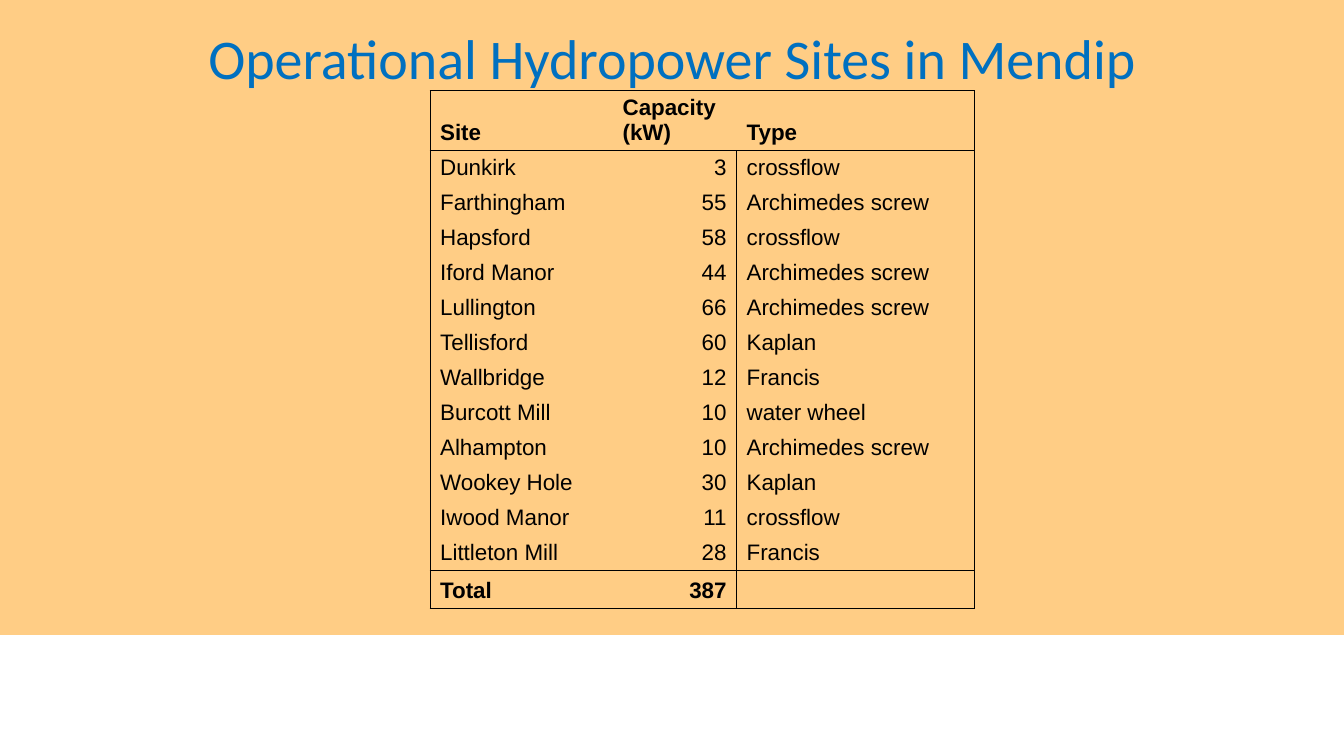
"""Build the slide listing operational hydropower sites in Mendip."""
import pptx
import pptx.dml.color
import pptx.enum.shapes
import pptx.enum.text
import pptx.oxml.ns
import pptx.util
from lxml import etree

WIDTH, HEIGHT = 13.33, 7.5
COLUMNS = [1.81, 1.23, 2.36]
HEADER_ROW, BODY_ROW = 0.52, 0.3
ROWS = [
    ("Site", "Capacity (kW)", "Type"),
    ("Dunkirk", "3", "crossflow"),
    ("Farthingham", "55", "Archimedes screw"),
    ("Hapsford", "58", "crossflow"),
    ("Iford Manor", "44", "Archimedes screw"),
    ("Lullington", "66", "Archimedes screw"),
    ("Tellisford", "60", "Kaplan"),
    ("Wallbridge", "12", "Francis"),
    ("Burcott Mill", "10", "water wheel"),
    ("Alhampton", "10", "Archimedes screw"),
    ("Wookey Hole", "30", "Kaplan"),
    ("Iwood Manor", "11", "crossflow"),
    ("Littleton Mill", "28", "Francis"),
    ("Total", "387", ""),
]


def rgb(value):
    return pptx.dml.color.RGBColor.from_string(value)


def box(x, y, w, h):
    shares = ((x, WIDTH), (y, HEIGHT), (w, WIDTH), (h, HEIGHT))
    return [pptx.util.Inches(share * full) for share, full in shares]


def style(p, font, size, color, bold=False):
    for r in p.runs:
        r.font.name = font
        r.font.size = pptx.util.Pt(size)
        r.font.bold = bold
        r.font.color.rgb = rgb(color)


def add_band(s, place, color, opacity):
    sp = s.shapes.add_shape(pptx.enum.shapes.MSO_SHAPE.RECTANGLE, *place)
    sp.shadow.inherit = False
    sp.fill.solid()
    sp.fill.fore_color.rgb = rgb(color)
    sp.line.fill.background()
    tint = sp.fill._xPr.find(".//" + pptx.oxml.ns.qn("a:srgbClr"))
    etree.SubElement(tint, pptx.oxml.ns.qn("a:alpha"), val=str(opacity * 1000))


def add_title(s, place, text):
    tf = s.shapes.add_textbox(*place).text_frame
    tf.word_wrap = True
    tf.vertical_anchor = pptx.enum.text.MSO_ANCHOR.MIDDLE
    p = tf.paragraphs[0]
    p.text = text
    p.alignment = pptx.enum.text.PP_ALIGN.CENTER
    style(p, "Calibri", 40, "0070C0")


def set_borders(cell, edges):
    qn = pptx.oxml.ns.qn
    props = cell._tc.get_or_add_tcPr()
    for side in "LRTB":
        line = etree.SubElement(props, qn("a:ln" + side), w="12700")
        if side in edges:
            fill = etree.SubElement(line, qn("a:solidFill"))
            etree.SubElement(fill, qn("a:srgbClr"), val="000000")
        else:
            etree.SubElement(line, qn("a:noFill"))


def cell_edges(row, col):
    last = len(ROWS) - 1
    rules = {
        "L": col == 0 or (col == 2 and row > 0),
        "R": col == 2 or (col == 1 and row > 0),
        "T": row in (0, 1, last),
        "B": row in (0, last - 1, last),
    }
    return [side for side, drawn in rules.items() if drawn]


def fill_cell(cell, row, col):
    last = len(ROWS) - 1
    cell.vertical_anchor = pptx.enum.text.MSO_ANCHOR.BOTTOM
    set_borders(cell, cell_edges(row, col))
    cell.fill.background()
    p = cell.text_frame.paragraphs[0]
    if not ROWS[row][col]:
        etree.SubElement(p._p, pptx.oxml.ns.qn("a:endParaRPr"), sz="1600")
        return
    p.text = ROWS[row][col]
    if col == 1 and row > 0:
        p.alignment = pptx.enum.text.PP_ALIGN.RIGHT
    style(p, "Arial", 16, "000000", bold=row in (0, last))


def add_sites(s, place):
    table = s.shapes.add_table(len(ROWS), len(COLUMNS), *place).table
    table.first_row = table.horz_banding = False
    for column, width in zip(table.columns, COLUMNS):
        column.width = pptx.util.Inches(width)
    for i, row in enumerate(table.rows):
        row.height = pptx.util.Inches(BODY_ROW if i else HEADER_ROW)
        for j, cell in enumerate(row.cells):
            fill_cell(cell, i, j)


def main():
    prs = pptx.Presentation()
    prs.slide_width = pptx.util.Inches(WIDTH)
    prs.slide_height = pptx.util.Inches(HEIGHT)
    s = prs.slides.add_slide(prs.slide_layouts[6])
    add_band(s, box(0, 0, 1, 0.84), "FFAA2D", 58)
    add_sites(s, box(0.32, 0.12, 0.41, 0.72))
    add_title(s, box(0.07, -0.02, 0.86, 0.19), "Operational Hydropower Sites in Mendip")
    prs.save("out.pptx")


if __name__ == "__main__":
    main()
